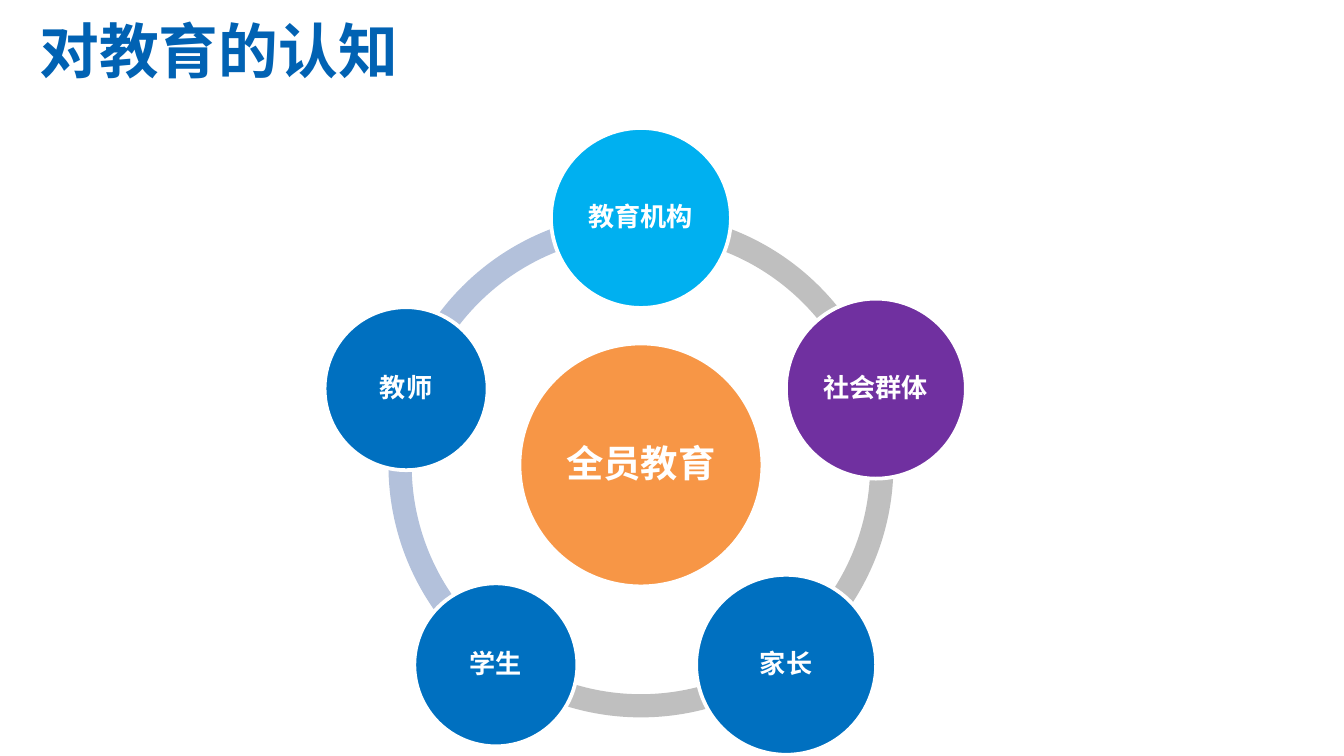
from dataclasses import dataclass
from math import cos, radians, sin

from lxml.etree import SubElement
from pptx import Presentation
from pptx.dml.color import RGBColor
from pptx.enum.shapes import MSO_SHAPE as Shape
from pptx.enum.text import MSO_ANCHOR as Anchor, PP_ALIGN as Align
from pptx.oxml.ns import qn
from pptx.util import Emu, Pt


@dataclass(frozen=True)
class Theme:
    font: str = "Noto Sans CJK SC"
    title: str = "0162B3"
    white: str = "FFFFFF"
    orange: str = "F79646"
    cyan: str = "00B0F0"
    purple: str = "7030A0"
    blue: str = "0070C0"
    pale_blue: str = "B3C1DB"
    grey: str = "BFBFBF"
    title_size: int = 32
    hub_size: int = 20
    node_size: int = 14


THEME = Theme()
EMU_PER_PX = 914400 / 134.4
CENTER_X, CENTER_Y = 641, 465
ORBIT = 247
RING = 505
RING_THICKNESS = 0.046
HUB = 243
LARGE, SMALL = 180, 163
START_ANGLE = 270

NODES = [
    ("教育机构", LARGE, THEME.cyan, THEME.grey),
    ("社会群体", LARGE, THEME.purple, THEME.grey),
    ("家长", LARGE, THEME.blue, THEME.grey),
    ("学生", SMALL, THEME.blue, THEME.pale_blue),
    ("教师", SMALL, THEME.blue, THEME.pale_blue),
]
STEP = 360 // len(NODES)


def px(n):
    return Emu(round(n * EMU_PER_PX))


def rgb(color):
    return RGBColor.from_string(color)


def add_run(p, text, size, color):
    r = p.add_run()
    r.text = text
    r.font.name = THEME.font
    r.font.size = Pt(size)
    r.font.bold = True
    r.font.color.rgb = rgb(color)
    SubElement(r._r.get_or_add_rPr(), qn("a:ea"), typeface=THEME.font)


def add_centered(slide, kind, x, y, size, color):
    box = px(x - size / 2), px(y - size / 2), px(size), px(size)
    sp = slide.shapes.add_shape(kind, *box)
    sp.shadow.inherit = False
    sp.fill.solid()
    sp.fill.fore_color.rgb = rgb(color)
    return sp


def add_arc(slide, start, color):
    sp = add_centered(slide, Shape.BLOCK_ARC, CENTER_X, CENTER_Y, RING, color)
    sp.line.fill.background()
    sp.adjustments[0] = start % 360 * 0.6
    sp.adjustments[1] = (start + STEP) % 360 * 0.6
    sp.adjustments[2] = RING_THICKNESS


def add_circle(slide, x, y, size, color, text, text_size):
    sp = add_centered(slide, Shape.OVAL, x, y, size, color)
    sp.line.color.rgb = rgb(THEME.white)
    sp.line.width = Pt(2)
    tf = sp.text_frame
    tf.word_wrap = True
    tf.vertical_anchor = Anchor.MIDDLE
    tf.margin_left = tf.margin_right = tf.margin_top = tf.margin_bottom = px(3)
    p = tf.paragraphs[0]
    p.alignment = Align.CENTER
    p.line_spacing = 0.9
    add_run(p, text, text_size, THEME.white)


def add_title(slide, text):
    sp = slide.shapes.title
    sp.left, sp.top, sp.width, sp.height = px(26), px(9), px(1210), px(82)
    tf = sp.text_frame
    tf.word_wrap = True
    tf.vertical_anchor = Anchor.MIDDLE
    p = tf.paragraphs[0]
    p.alignment = Align.LEFT
    add_run(p, text, THEME.title_size, THEME.title)


def add_cycle(slide):
    angles = [START_ANGLE + i * STEP for i in range(len(NODES))]
    arcs = [(angle, node[3]) for angle, node in zip(angles, NODES)]
    for angle, color in reversed(arcs):
        add_arc(slide, angle, color)
    add_circle(slide, CENTER_X, CENTER_Y, HUB, THEME.orange, "全员教育", THEME.hub_size)
    for angle, (text, size, color, _) in zip(angles, NODES):
        x = CENTER_X + ORBIT * cos(radians(angle))
        y = CENTER_Y + ORBIT * sin(radians(angle))
        add_circle(slide, x, y, size, color, text, THEME.node_size)


def main():
    prs = Presentation()
    prs.slide_width, prs.slide_height = px(1344), px(756)
    slide = prs.slides.add_slide(prs.slide_layouts[5])
    add_title(slide, "对教育的认知")
    add_cycle(slide)
    prs.save("out.pptx")


if __name__ == "__main__":
    main()
